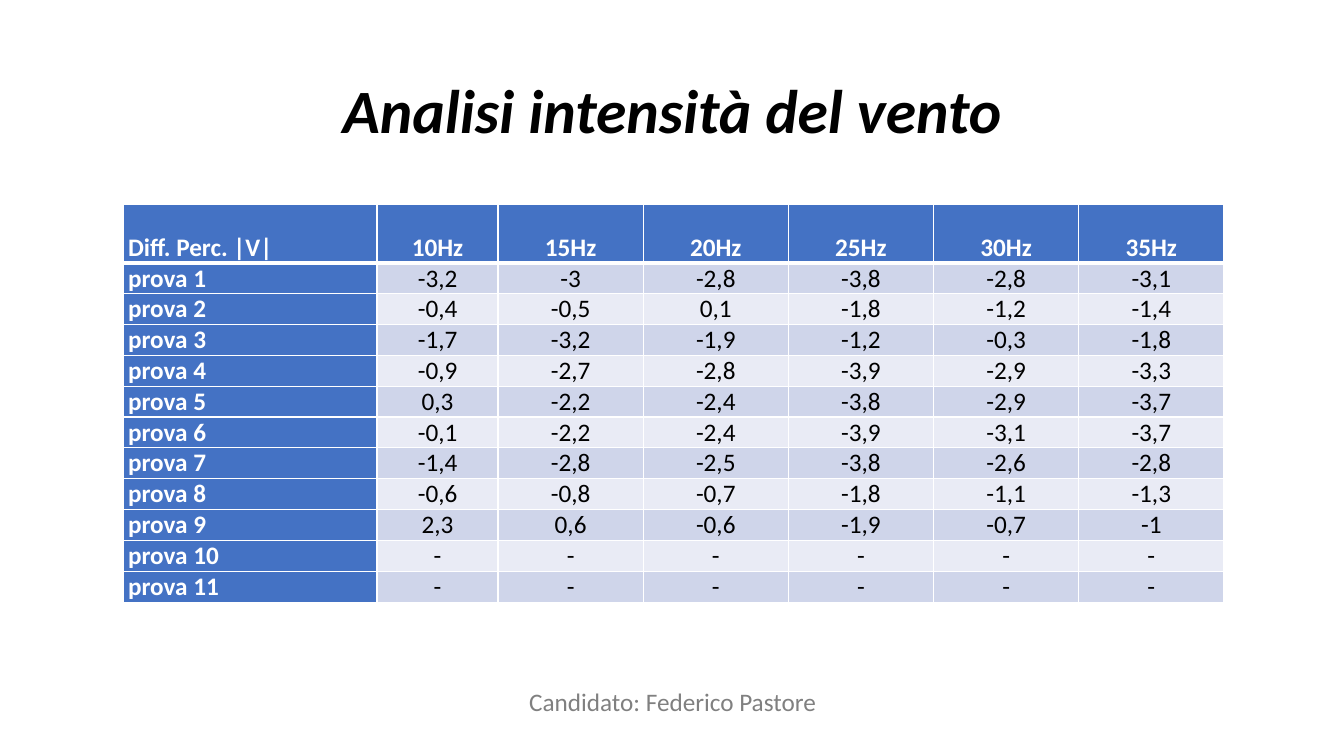
from lxml.etree import SubElement
from pptx import Presentation
from pptx.dml.color import RGBColor
from pptx.enum.text import MSO_ANCHOR, MSO_AUTO_SIZE, PP_ALIGN
from pptx.oxml.ns import qn
from pptx.util import Inches, Pt

BLUE, WHITE, BLACK, GREY = "4472C4", "FFFFFF", "000000", "808080"
BANDS = ("CFD5EA", "E9EBF5")
COLUMN_WIDTHS = (2.52, 1.2) + (1.44,) * 5
ROW_HEIGHTS = (0.58,) + (0.29,) * 9 + (0.31, 0.21)
HEADINGS = ["Diff. Perc. |V|"] + [f"{hertz}Hz" for hertz in range(10, 40, 5)]
TRIALS = [
    ["-3,2", "-3", "-2,8", "-3,8", "-2,8", "-3,1"],
    ["-0,4", "-0,5", "0,1", "-1,8", "-1,2", "-1,4"],
    ["-1,7", "-3,2", "-1,9", "-1,2", "-0,3", "-1,8"],
    ["-0,9", "-2,7", "-2,8", "-3,9", "-2,9", "-3,3"],
    ["0,3", "-2,2", "-2,4", "-3,8", "-2,9", "-3,7"],
    ["-0,1", "-2,2", "-2,4", "-3,9", "-3,1", "-3,7"],
    ["-1,4", "-2,8", "-2,5", "-3,8", "-2,6", "-2,8"],
    ["-0,6", "-0,8", "-0,7", "-1,8", "-1,1", "-1,3"],
    ["2,3", "0,6", "-0,6", "-1,9", "-0,7", "-1"],
    ["-"] * 6,
    ["-"] * 6,
]


def rgb(value):
    """Turn a hex string into a colour."""
    return RGBColor.from_string(value)


def apply_format(target, **values):
    """Set each named attribute on the target."""
    for name, value in values.items():
        setattr(target, name, value)


def write(paragraph, text, size, color, **values):
    """Fill a paragraph with text in the slide's font."""
    run = paragraph.add_run()
    run.text = text
    apply_format(run.font, name="Calibri", size=Pt(size), **values)
    run.font.color.rgb = rgb(color)


def add_borders(cell, widths):
    """Draw white borders, given in points by side."""
    properties = cell._tc.get_or_add_tcPr()
    for side, width in widths.items():
        line = SubElement(properties, qn(f"a:ln{side}"), w=str(Pt(width)))
        fill = SubElement(line, qn("a:solidFill"))
        SubElement(fill, qn("a:srgbClr"), val=WHITE)


def fill_cell(cell, text, row, column):
    """Format one table cell according to its row and column."""
    heading = row == 0 or column == 0
    apply_format(cell, vertical_anchor=MSO_ANCHOR.BOTTOM,
                 margin_left=Inches(0.05), margin_right=Inches(0.05),
                 margin_top=0, margin_bottom=0)
    add_borders(cell, {"L": 1, "R": 1, "T": 3 if row == 1 else 1,
                       "B": 3 if row == 0 else 1})
    cell.fill.solid()
    cell.fill.fore_color.rgb = rgb(BLUE if heading else BANDS[(row - 1) % 2])
    paragraph = cell.text_frame.paragraphs[0]
    paragraph.alignment = PP_ALIGN.CENTER if column else PP_ALIGN.LEFT
    apply_format(paragraph._p.get_or_add_pPr(), marL=0, indent=Inches(0.12))
    write(paragraph, text, 18, WHITE if heading else BLACK, bold=heading)


def add_trials(slide, left, top, width, height):
    """Place the table of percentage differences."""
    rows = [HEADINGS] + [[f"prova {number}"] + trial
                         for number, trial in enumerate(TRIALS, 1)]
    trials = slide.shapes.add_table(
        len(rows), len(HEADINGS), Inches(left), Inches(top),
        Inches(width), Inches(height)).table
    trials.first_col = True
    for column, column_width in zip(trials.columns, COLUMN_WIDTHS):
        column.width = Inches(column_width)
    for row, row_height in zip(trials.rows, ROW_HEIGHTS):
        row.height = Inches(row_height)
    for row, texts in enumerate(rows):
        for column, text in enumerate(texts):
            fill_cell(trials.cell(row, column), text, row, column)


def add_title(slide, left, top, width, height):
    """Place the slide title."""
    title = slide.shapes.title
    apply_format(title, left=Inches(left), top=Inches(top),
                 width=Inches(width), height=Inches(height))
    title.text_frame.vertical_anchor = MSO_ANCHOR.MIDDLE
    heading = title.text_frame.paragraphs[0]
    apply_format(heading, alignment=PP_ALIGN.CENTER, line_spacing=0.9)
    write(heading, "Analisi intensità del vento", 44, BLACK,
          bold=True, italic=True)


def add_candidate(slide, left, top, width, height):
    """Place the candidate's name at the foot."""
    candidate = slide.shapes.add_textbox(
        Inches(left), Inches(top), Inches(width), Inches(height)).text_frame
    apply_format(candidate, word_wrap=False,
                 auto_size=MSO_AUTO_SIZE.SHAPE_TO_FIT_TEXT)
    write(candidate.paragraphs[0], "Candidato: Federico Pastore", 18, GREY)


def main():
    """Build and save the slide."""
    deck = Presentation()
    apply_format(deck, slide_width=Inches(13.33), slide_height=Inches(7.5))
    slide = deck.slides.add_slide(deck.slide_layouts[5])
    add_title(slide, 0.92, 0.4, 11.5, 1.45)
    add_trials(slide, 1.22, 2.03, sum(COLUMN_WIDTHS), sum(ROW_HEIGHTS))
    add_candidate(slide, 5.15, 6.76, 3.05, 0.4)
    deck.save("out.pptx")


if __name__ == "__main__":
    main()
